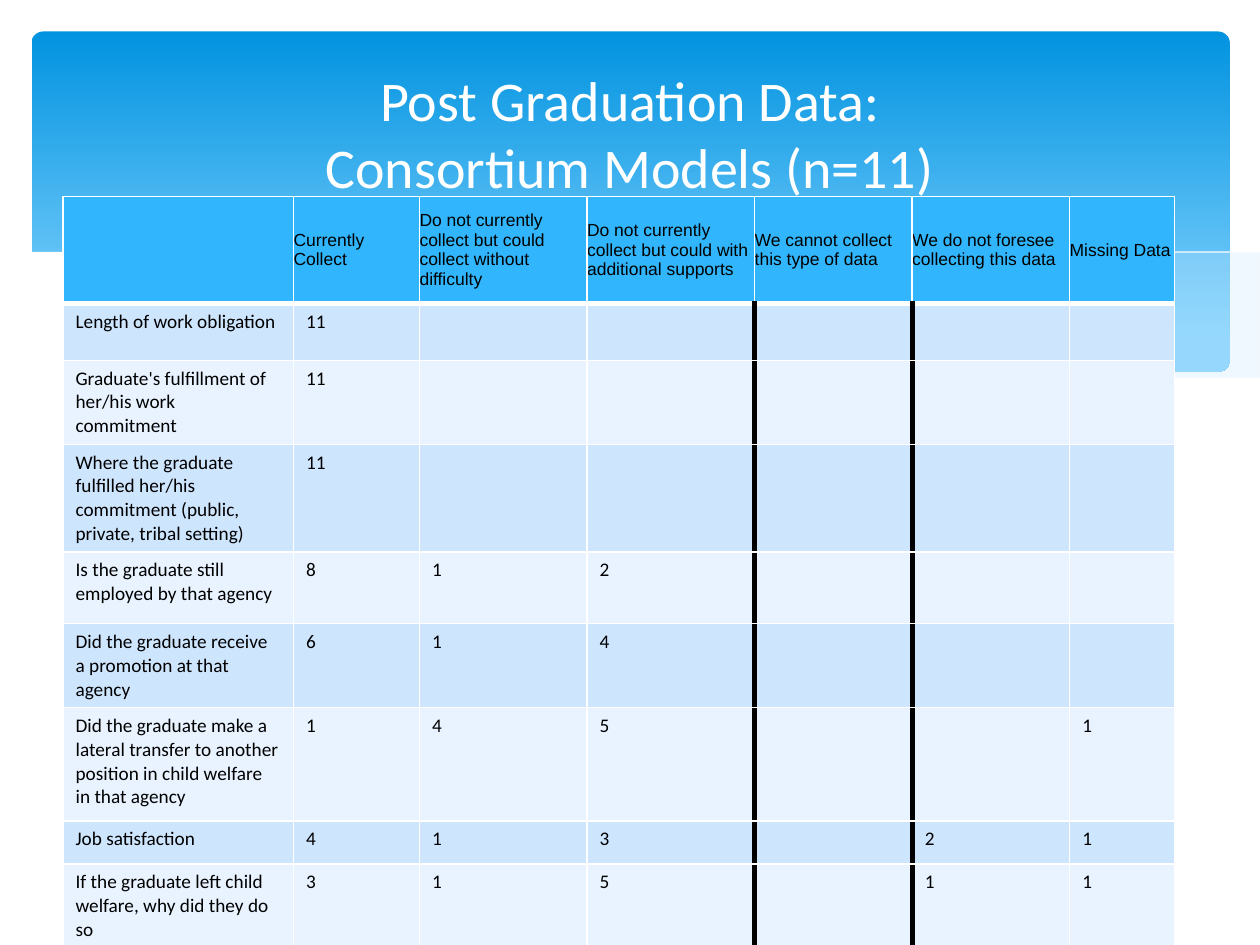
"""Build the slide on post graduation data collected by consortium models."""
from lxml import etree
from pptx import Presentation, util as u
from pptx.dml.color import RGBColor
from pptx.enum import shapes, text
from pptx.oxml.ns import qn

TITLE = ("Post Graduation Data:", "Consortium Models (n=11)")
HEADERS = (
    "", "Currently Collect",
    "Do not currently collect but could collect without difficulty",
    "Do not currently collect but could with additional supports",
    "We cannot collect this type of data",
    "We do not foresee collecting this data", "Missing Data",
)
ROWS = (
    ("Length of work obligation", "11", "", "", "", "", ""),
    ("Graduate's fulfillment of her/his work commitment", "11", "", "", "", "", ""),
    ("Where the graduate fulfilled her/his commitment (public, private, tribal setting)",
     "11", "", "", "", "", ""),
    ("Is the graduate still employed by that agency", "8", "1", "2", "", "", ""),
    ("Did the graduate receive a promotion at that agency", "6", "1", "4", "", "", ""),
    ("Did the graduate make a lateral transfer to another position in child welfare in that agency",
     "1", "4", "5", "", "", "1"),
    ("Job satisfaction", "4", "1", "3", "", "2", "1"),
    ("If the graduate left child welfare, why did they do so", "3", "1", "5", "", "1", "1"),
)
COLUMN_WIDTHS = (1.83, 1, 1.33, 1.33, 1.25, 1.25, 0.83)
ROW_HEIGHTS = (0.85, 0.45, 0.59, 0.7, 0.57, 0.57, 0.9, 0.34, 0.57)
HEADER_FILL, BAND_FILLS = "31B6FD", ("CEE5FE", "E8F3FF")
DIVIDED_COLUMN = 4

RIGHT_WAVE = (
    (9.76, 2), (9.48, 2.04), (9.21, 2.1), (8.91, 2.16), (8.61, 2.23), (8.05, 2.37),
    (7.53, 2.48), (7.06, 2.57), (6.61, 2.65), (6.91, 2.69), (7.32, 2.74), (7.69, 2.77),
    (8.03, 2.78), (8.44, 2.77), (8.81, 2.73), (9.13, 2.67), (9.42, 2.59), (9.63, 2.52),
    (9.76, 2.47),
)
MIDDLE_WAVE = (
    (8.93, 2.73), (8.37, 2.65), (7.75, 2.54), (7.06, 2.4), (6.29, 2.22), (5.84, 2.11),
    (5.41, 2.03), (5.02, 1.96), (4.65, 1.91), (4.2, 1.87), (3.8, 1.85), (3.44, 1.86),
    (3.13, 1.88), (2.86, 1.91), (3.42, 1.99), (4.04, 2.11), (4.49, 2.22), (5.3, 2.4),
    (6.01, 2.55), (6.65, 2.66), (7.22, 2.74), (7.73, 2.77), (8.18, 2.78), (8.57, 2.77),
)
LONG_LINE = (
    (3.09, 1.95), (3.28, 1.92), (3.53, 1.89), (3.87, 1.87), (4.33, 1.87), (4.89, 1.9),
    (5.56, 1.97), (6.36, 2.08), (6.95, 2.19), (7.6, 2.33), (8.31, 2.51), (9.07, 2.72),
)
SHORT_LINE = (
    (6.13, 2.57), (6.53, 2.46), (6.95, 2.35), (7.48, 2.23), (8.06, 2.1), (8.66, 1.99),
    (9.1, 1.92), (9.51, 1.87), (9.75, 1.85),
)
WHITE_WAVE = (
    (9.77, 2.46), (9.59, 2.53), (9.4, 2.59), (9.2, 2.65), (8.99, 2.69), (8.75, 2.73),
    (8.5, 2.75), (8.09, 2.77), (7.61, 2.75), (7.08, 2.7), (6.48, 2.62), (5.79, 2.5),
    (5.03, 2.33), (4.47, 2.2), (3.91, 2.07), (3.4, 1.97), (2.92, 1.9), (2.5, 1.86),
    (2.11, 1.84), (1.77, 1.84), (1.46, 1.85), (1.19, 1.87), (0.95, 1.91), (0.76, 1.95),
    (0.59, 1.99), (0.46, 2.03), (0.36, 2.07), (0.23, 2.13), (0.23, 3.29), (9.77, 3.29),
)
WAVES = (
    (RIGHT_WAVE, "C6E7FC", 29), (MIDDLE_WAVE, "C6E7FC", 40),
    (LONG_LINE, None, 100), (SHORT_LINE, None, 100), (WHITE_WAVE, "FFFFFF", 100),
)


def rgb(value):
    return RGBColor.from_string(value)


def add_span(para, words, font, size, color):
    span = para.add_run()
    span.text = words
    span.font.name, span.font.size = font, u.Pt(size)
    span.font.color.rgb = rgb(color)


def add_banner(page):
    banner = page.shapes.add_shape(shapes.MSO_SHAPE.ROUNDED_RECTANGLE,
                                   *map(u.Inches, (0.25, 0.25, 9.51, 2.7)))
    banner.adjustments[0] = 0.034
    banner.shadow.inherit = False
    banner.line.fill.background()
    banner.fill.gradient()
    banner.fill.gradient_angle = 270
    stops = ((0, "0293E0"), (0.9, "83D3FE"))
    for stop, (position, color) in zip(banner.fill.gradient_stops, stops):
        stop.position, stop.color.rgb = position, rgb(color)


def add_wave(page, points, color, opacity):
    builder = page.shapes.build_freeform(*points[0], scale=u.Inches(1))
    builder.add_line_segments(points[1:], close=color is not None)
    wave = builder.convert_to_shape()
    wave.shadow.inherit = False
    if color is None:
        wave.fill.background()
        wave.line.color.rgb, wave.line.width = rgb("FFFFFF"), u.Pt(0)
        return
    wave.line.fill.background()
    wave.fill.solid()
    wave.fill.fore_color.rgb = rgb(color)
    if opacity < 100:
        tint = wave.element.spPr.find(qn("a:solidFill"))[0]
        etree.SubElement(tint, qn("a:alpha"), val=str(opacity * 1000))


def set_borders(cell, borders):
    properties = cell._tc.get_or_add_tcPr()
    for index, side in enumerate("LRTB"):
        color, width = borders.get(side, ("FFFFFF", 1))
        line = etree.Element(qn(f"a:ln{side}"), w=str(u.Pt(width)))
        fill = etree.SubElement(line, qn("a:solidFill"))
        etree.SubElement(fill, qn("a:srgbClr"), val=color)
        properties.insert(index, line)


def fill_cell(cell, words, row, column):
    header = row == 0
    font, size = ("Arial", 10) if header else ("Calibri", 11)
    cell.fill.solid()
    cell.fill.fore_color.rgb = rgb(HEADER_FILL if header else BAND_FILLS[(row - 1) % 2])
    borders = {}
    if header:
        borders["B"] = ("FFFFFF", 3)
        cell.vertical_anchor = text.MSO_ANCHOR.MIDDLE
        cell.margin_left = cell.margin_right = cell.margin_top = cell.margin_bottom = 0
    else:
        if row == 1:
            borders["T"] = ("FFFFFF", 3)
        if column in (DIVIDED_COLUMN, DIVIDED_COLUMN + 1):
            borders["L"] = ("000000", 3)
        if column in (DIVIDED_COLUMN - 1, DIVIDED_COLUMN):
            borders["R"] = ("000000", 3)
    set_borders(cell, borders)
    para = cell.text_frame.paragraphs[0]
    if words:
        add_span(para, words, font, size, "000000")
    else:
        etree.SubElement(para._p, qn("a:endParaRPr"), sz=str(size * 100))


def add_data_table(page):
    content = (HEADERS, *ROWS)
    frame = page.shapes.add_table(len(content), len(HEADERS),
                                  *map(u.Inches, (0.5, 1.56, 8.83, 5.9)))
    table = frame.table
    table.first_row = table.horz_banding = False
    for column, width in zip(table.columns, COLUMN_WIDTHS):
        column.width = u.Inches(width)
    for row, height in zip(table.rows, ROW_HEIGHTS):
        row.height = u.Inches(height)
    frame.height = u.Inches(5.9)
    for row, entries in enumerate(content):
        for column, words in enumerate(entries):
            fill_cell(table.cell(row, column), words, row, column)


def add_title(page):
    box = page.shapes.add_textbox(*map(u.Inches, (0.5, 0.37, 9, 1.37)))
    box.text_frame.word_wrap = True
    box.text_frame.vertical_anchor = text.MSO_ANCHOR.MIDDLE
    para = box.text_frame.paragraphs[0]
    para.alignment = text.PP_ALIGN.CENTER
    for index, words in enumerate(TITLE):
        if index:
            para.add_line_break()
        add_span(para, words, "Calibri", 32, "FFFFFF")


def main():
    deck = Presentation()
    deck.slide_width, deck.slide_height = u.Inches(10), u.Inches(7.5)
    page = deck.slides.add_slide(deck.slide_layouts[6])
    add_banner(page)
    for wave in WAVES:
        add_wave(page, *wave)
    add_data_table(page)
    add_title(page)
    deck.save("out.pptx")


if __name__ == "__main__":
    main()
